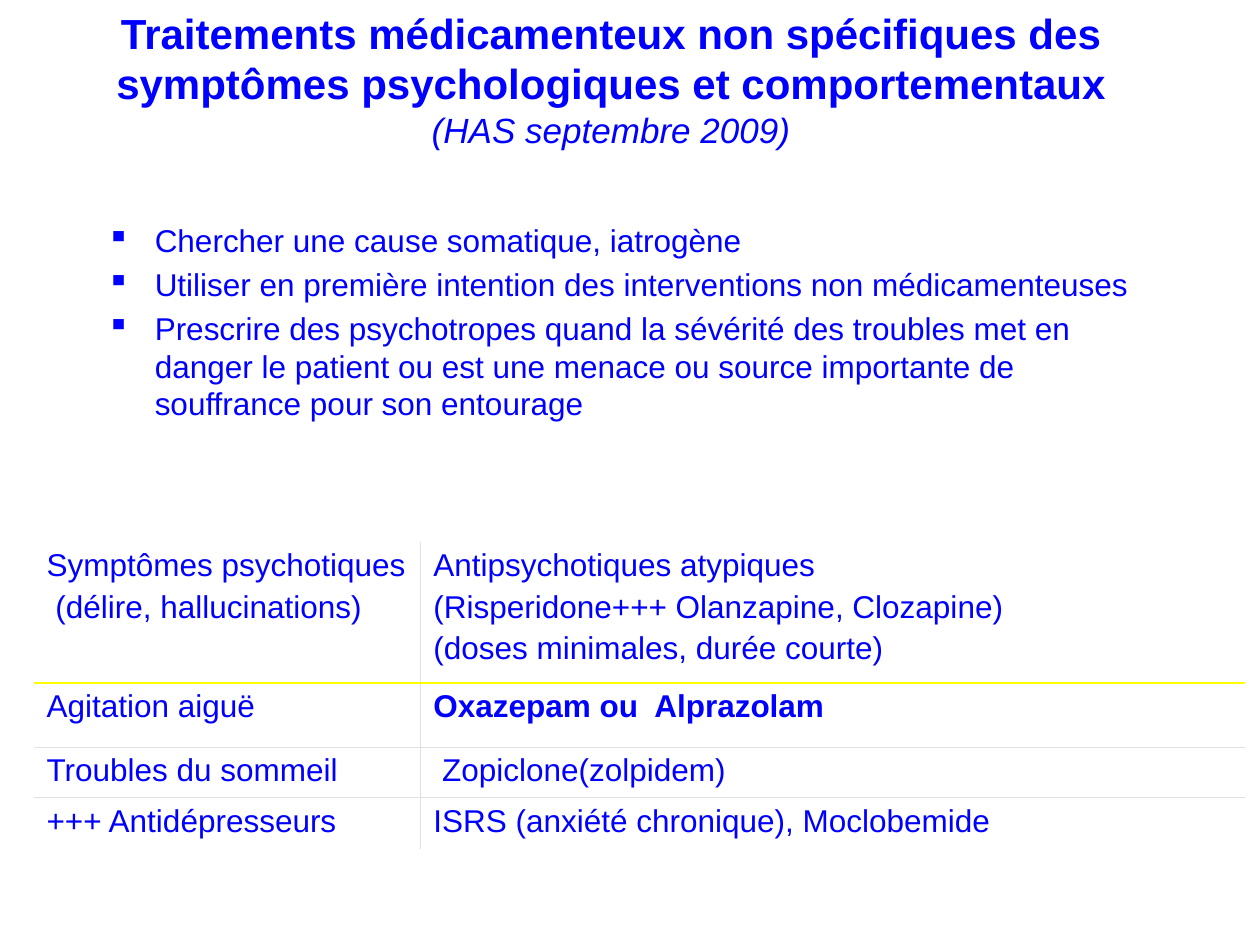
import pptx
import pptx.util
import pptx.oxml
import pptx.oxml.ns
import pptx.dml.color
import pptx.enum.text
from dataclasses import dataclass

Inch = pptx.util.Inches
Point = pptx.util.Pt
Align = pptx.enum.text.PP_ALIGN
Anchor = pptx.enum.text.MSO_ANCHOR


@dataclass(frozen=True)
class Theme:
    font: str = "Arial"
    ink: str = "0000FF"
    rule: str = "FFFF00"
    hair: str = "E0E0E0"
    head: int = 24
    sub: int = 20
    body: int = 18
    gap: float = 3.6


LOOK = Theme()
WIDE, HIGH = 10, 7.5

POINTS = [
    "Chercher une cause somatique, iatrogène",
    "Utiliser en première intention des interventions non médicamenteuses",
    "Prescrire des psychotropes quand la sévérité des troubles met en danger "
    "le patient ou est une menace ou source importante de souffrance pour son entourage",
]
COLS = [3.07, 6.54]
ROWS = [1.12, 0.51, 0.4, 0.41]
CARE = [
    (["Symptômes psychotiques", " (délire, hallucinations)"],
     ["Antipsychotiques atypiques", "(Risperidone+++ Olanzapine, Clozapine)",
      "(doses minimales, durée courte)"]),
    (["Agitation aiguë"], ["Oxazepam ou  Alprazolam"]),
    (["Troubles du sommeil"], [" Zopiclone(zolpidem)"]),
    (["+++ Antidépresseurs"], ["ISRS (anxiété chronique), Moclobemide"]),
]
BOLD = (1, 1)


def write(para, text, size=LOOK.body, bold=False, slant=False):
    run = para.add_run()
    run.text = text
    font = run.font
    font.name, font.size = LOOK.font, Point(size)
    font.bold, font.italic = bold, slant
    font.color.rgb = pptx.dml.color.RGBColor.from_string(LOOK.ink)


def add_box(slide, left, top, width, height, anchor=Anchor.TOP):
    box = slide.shapes.add_textbox(
        Inch(left * WIDE), Inch(top * HIGH), Inch(width * WIDE), Inch(height * HIGH))
    frame = box.text_frame
    frame.word_wrap = True
    frame.vertical_anchor = anchor
    return frame


def fill_list(frame, lines, mark=None, bold=False):
    for i, line in enumerate(lines):
        para = frame.add_paragraph() if i else frame.paragraphs[0]
        para.space_before = Point(LOOK.gap)
        write(para, line, bold=bold)
        if mark:
            props = para._p.get_or_add_pPr()
            dent = Inch(0.38)
            props.set("marL", str(dent))
            props.set("indent", str(-dent))
            pptx.oxml.ns.qn("a:buChar")
            node = props.makeelement(pptx.oxml.ns.qn("a:buChar"), {"char": mark})
            props.append(node)


def edge(cell, side, color=None, width=1):
    space = pptx.oxml.ns.nsdecls("a")
    paint = (f'<a:solidFill><a:srgbClr val="{color}"/></a:solidFill>'
             if color else "<a:noFill/>")
    line = pptx.oxml.parse_xml(
        f'<a:ln{side} {space} w="{Point(width)}">{paint}</a:ln{side}>')
    cell._tc.get_or_add_tcPr().append(line)


def add_head(slide):
    frame = add_box(slide, 0.035, 0, 0.9, 1 / 6, Anchor.MIDDLE)
    para = frame.paragraphs[0]
    para.alignment = Align.CENTER
    write(para, "Traitements médicamenteux non spécifiques des symptômes "
          "psychologiques et comportementaux", size=LOOK.head, bold=True)
    para.add_line_break()
    write(para, "(HAS septembre 2009)", size=LOOK.sub, slant=True)


def add_grid(slide):
    table = slide.shapes.add_table(
        len(ROWS), len(COLS), Inch(0.27), Inch(4.3),
        Inch(sum(COLS)), Inch(sum(ROWS))).table
    table.first_row = table.horz_banding = False
    for col, width in zip(table.columns, COLS):
        col.width = Inch(width)
    for row, height in zip(table.rows, ROWS):
        row.height = Inch(height)
    rules = [None, (LOOK.rule, 1)] + [(LOOK.hair, 0.5)] * (len(ROWS) - 2) + [None]
    posts = [None, (LOOK.hair, 0.5), None]
    for r, pair in enumerate(CARE):
        for c, lines in enumerate(pair):
            cell = table.cell(r, c)
            fill_list(cell.text_frame, lines, bold=(r, c) == BOLD)
            sides = {"L": posts[c], "R": posts[c + 1], "T": rules[r], "B": rules[r + 1]}
            for side, style in sides.items():
                edge(cell, side, *(style or ()))
            cell.fill.background()


def main():
    deck = pptx.Presentation()
    deck.slide_width, deck.slide_height = Inch(WIDE), Inch(HIGH)
    slide = deck.slides.add_slide(deck.slide_layouts[6])
    add_head(slide)
    fill_list(add_box(slide, 0.075, 0.227, 0.859, 0.241), POINTS, mark="▪")
    add_grid(slide)
    deck.save("out.pptx")


if __name__ == "__main__":
    main()
